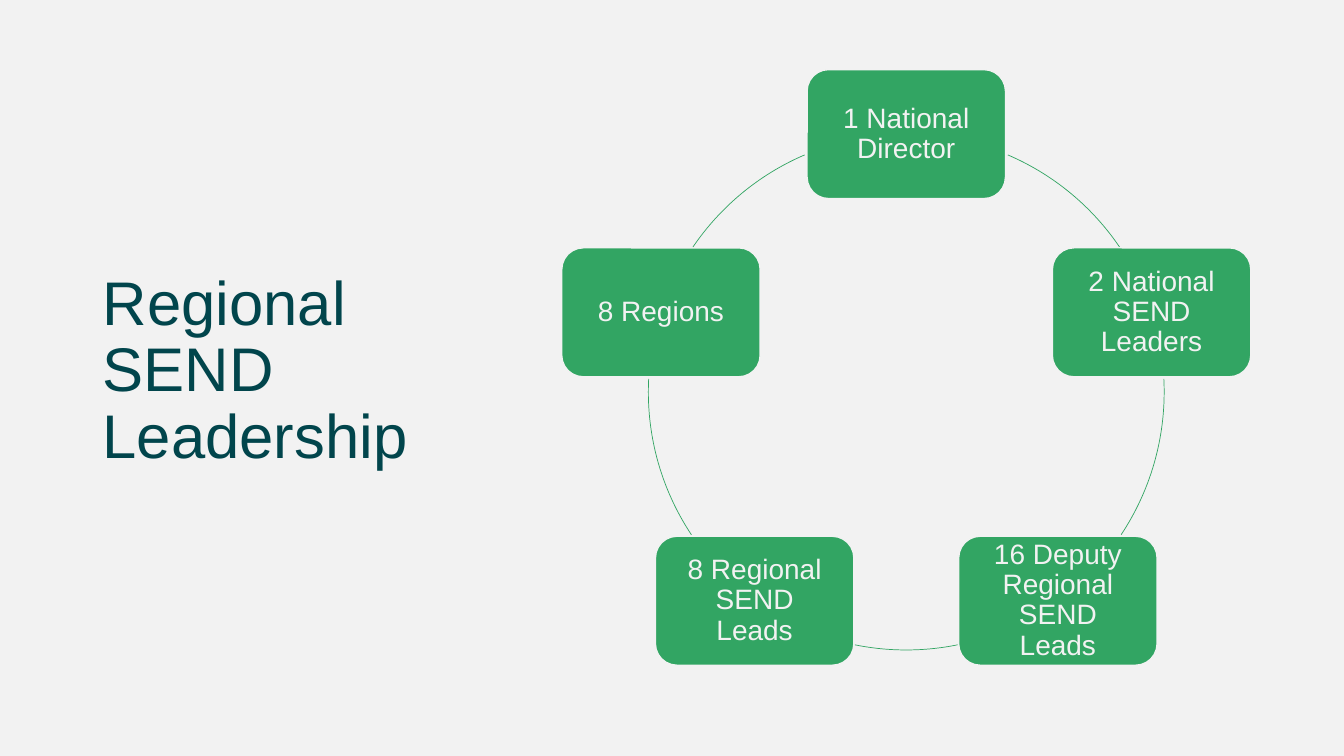
import math
from dataclasses import dataclass

import pptx
import pptx.dml.color
import pptx.enum.shapes
import pptx.enum.text
import pptx.util

Cm = pptx.util.Cm
Pt = pptx.util.Pt
MSO_SHAPE = pptx.enum.shapes.MSO_SHAPE
PP_ALIGN = pptx.enum.text.PP_ALIGN

COLORS = {"background": "F2F2F2", "title": "01454C", "green": "32A563"}
FONT = "Arial"
CENTER_X, CENTER_Y, RADIUS = 22.84, 9.88, 6.5
BOX_W, BOX_H = 5.0, 3.25


@dataclass
class Role:
    label: str
    arc_start: float
    arc_end: float


ROLES = [
    Role("1 National Director", 293.2, 325.8),
    Role("2 National SEND Leaders", 357.1, 33.6),
    Role("16 Deputy Regional SEND Leads", 78.5, 101.5),
    Role("8 Regional SEND Leads", 146.4, 182.9),
    Role("8 Regions", 214.2, 246.8),
]


def rgb(name: str) -> pptx.dml.color.RGBColor:
    return pptx.dml.color.RGBColor.from_string(COLORS[name])


def write_text(sp, text: str, size: float, color: str, align, inset: float) -> None:
    tf = sp.text_frame
    tf.text = text
    tf.word_wrap = True
    tf.vertical_anchor = pptx.enum.text.MSO_ANCHOR.MIDDLE
    tf.margin_left = tf.margin_right = Cm(inset)
    tf.margin_top = tf.margin_bottom = Cm(inset)
    p = tf.paragraphs[0]
    p.alignment = align
    p.line_spacing = 0.9
    r = p.runs[0]
    r.font.name = FONT
    r.font.size = Pt(size)
    r.font.color.rgb = rgb(color)


def draw_title(s, text: str) -> None:
    sp = s.shapes.add_textbox(Cm(2.34), Cm(1.73), Cm(9.37), Cm(15.29))
    write_text(sp, text, 44, "title", PP_ALIGN.LEFT, 0.25)


def draw_box(s, role: Role, angle: float) -> None:
    x = CENTER_X + RADIUS * math.cos(angle) - BOX_W / 2
    y = CENTER_Y + RADIUS * math.sin(angle) - BOX_H / 2
    sp = s.shapes.add_shape(
        MSO_SHAPE.ROUNDED_RECTANGLE, Cm(x), Cm(y), Cm(BOX_W), Cm(BOX_H)
    )
    sp.shadow.inherit = False
    sp.fill.solid()
    sp.fill.fore_color.rgb = rgb("green")
    sp.line.color.rgb = rgb("background")
    sp.line.width = Pt(1)
    write_text(sp, role.label, 20, "background", PP_ALIGN.CENTER, 0.36)


def draw_arc(s, role: Role) -> None:
    sp = s.shapes.add_shape(
        MSO_SHAPE.ARC,
        Cm(CENTER_X - RADIUS),
        Cm(CENTER_Y - RADIUS),
        Cm(2 * RADIUS),
        Cm(2 * RADIUS),
    )
    sp.shadow.inherit = False
    sp.fill.background()
    sp.line.color.rgb = rgb("green")
    sp.line.width = Pt(0.5)
    units_per_degree = 60000 / 100000
    sp.adjustments[0] = role.arc_start * units_per_degree
    sp.adjustments[1] = role.arc_end * units_per_degree


def main() -> None:
    prs = pptx.Presentation()
    prs.slide_width, prs.slide_height = Cm(33.87), Cm(19.05)
    s = prs.slides.add_slide(prs.slide_layouts[6])
    s.background.fill.solid()
    s.background.fill.fore_color.rgb = rgb("background")
    draw_title(s, "Regional SEND Leadership")
    for i, role in enumerate(ROLES):
        draw_box(s, role, math.radians(360 / len(ROLES) * i - 90))
        draw_arc(s, role)
    prs.save("out.pptx")


if __name__ == "__main__":
    main()
